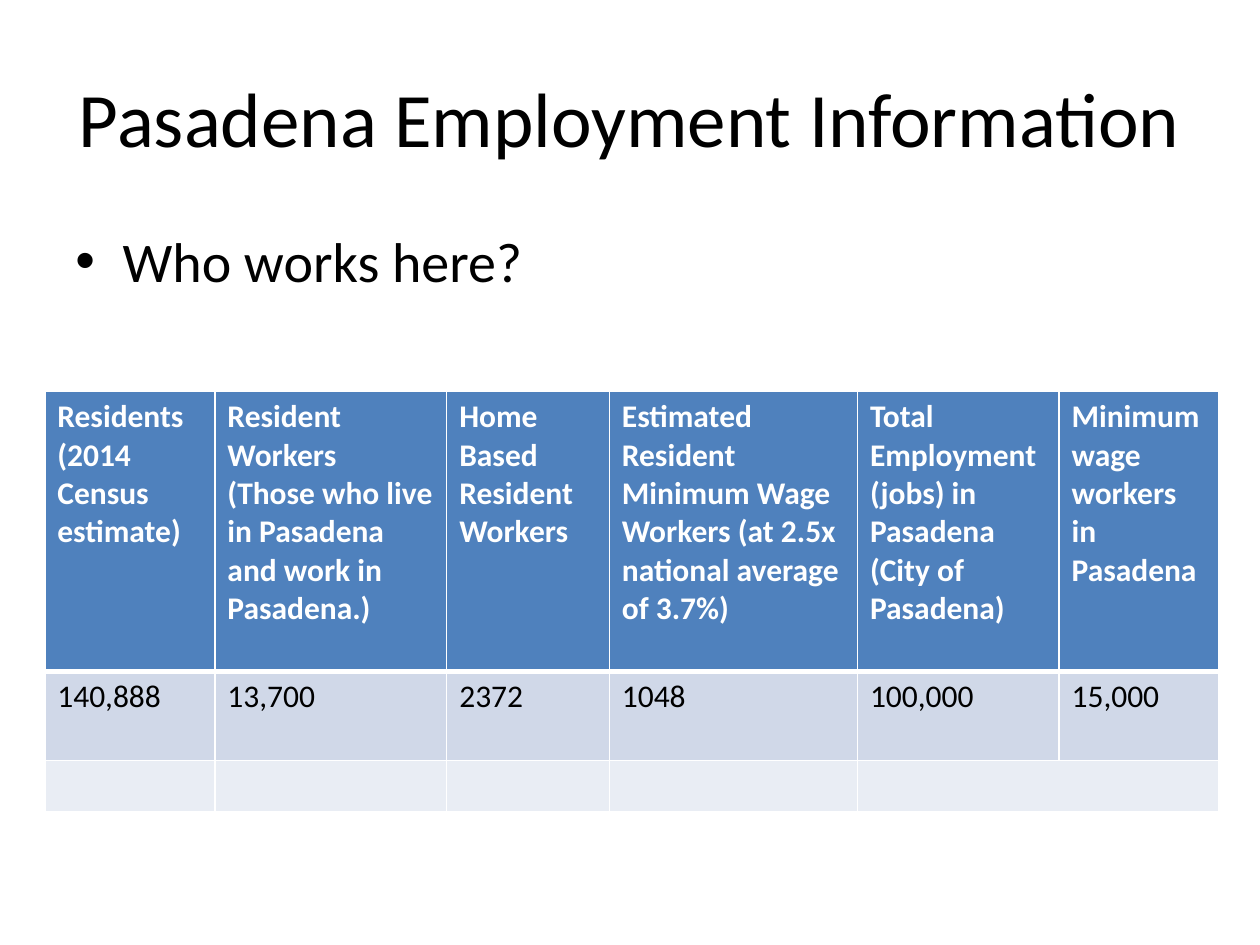
"""Build the Pasadena employment slide with its worker table."""
from lxml.etree import SubElement
from pptx import Presentation
from pptx.dml.color import RGBColor
from pptx.enum.text import MSO_ANCHOR as ANCHOR, PP_ALIGN as ALIGN
from pptx.oxml.ns import qn
from pptx.util import Pt

BLACK = RGBColor(0x00, 0x00, 0x00)
WHITE = RGBColor(0xFF, 0xFF, 0xFF)
BLUE = RGBColor(0x4F, 0x81, 0xBD)
BAND = RGBColor(0xD0, 0xD8, 0xE8)
PALE = RGBColor(0xE9, 0xED, 0xF4)


def add_run(p, text, size, color=BLACK, bold=False):
    r = p.add_run()
    r.text = text
    r.font.name = "Calibri"
    r.font.size = Pt(size)
    r.font.color.rgb = color
    r.font.bold = bold


def add_border(cell, side, width):
    ln = SubElement(cell._tc.get_or_add_tcPr(), qn(f"a:ln{side}"), w=str(Pt(width)))
    fill = SubElement(ln, qn("a:solidFill"))
    SubElement(fill, qn("a:srgbClr"), val=str(WHITE))


prs = Presentation()
prs.slide_width, prs.slide_height = Pt(720), Pt(540)
s = prs.slides.add_slide(prs.slide_layouts[6])

title = s.shapes.add_textbox(Pt(36), Pt(21.6), Pt(648), Pt(90))
tf = title.text_frame
tf.word_wrap = True
tf.vertical_anchor = ANCHOR.MIDDLE
p = tf.paragraphs[0]
p.alignment = ALIGN.CENTER
add_run(p, "Pasadena Employment Information", 44)

body = s.shapes.add_textbox(Pt(36), Pt(126), Pt(648), Pt(356.4))
tf = body.text_frame
tf.word_wrap = True
p = tf.paragraphs[0]
p.space_before = Pt(6.4)
pPr = p._p.get_or_add_pPr()
pPr.set("marL", str(Pt(27)))
pPr.set("indent", str(Pt(-27)))
SubElement(pPr, qn("a:buFont"), typeface="Arial")
SubElement(pPr, qn("a:buChar"), char="•")
add_run(p, "Who works here?", 32)

col_widths = [97.2, 132.5, 92.9, 141.8, 115.2, 91.4]
row_heights = [160, 51, 29.2]
headers = [
    ["Residents", "(2014 Census estimate)"],
    ["Resident Workers", "(Those who live in Pasadena and work in Pasadena.)"],
    ["Home Based Resident Workers"],
    ["Estimated Resident Minimum Wage Workers (at 2.5x national average of 3.7%)"],
    ["Total Employment (jobs) in Pasadena (City of Pasadena)"],
    ["Minimum wage workers in Pasadena"],
]
values = [["140,888"], ["13,700"], ["2372"], ["1048"], ["100,000"], ["15,000"]]
rows = [
    (headers, BLUE, WHITE, True),
    (values, BAND, BLACK, False),
    ([[]] * len(headers), PALE, BLACK, False),
]

table = s.shapes.add_table(len(rows), len(headers), Pt(25.6), Pt(223.6),
                           Pt(sum(col_widths)), Pt(sum(row_heights))).table
for column, width in zip(table.columns, col_widths):
    column.width = Pt(width)
for row, height in zip(table.rows, row_heights):
    row.height = Pt(height)

for i, (texts, fill, color, bold) in enumerate(rows):
    for j, lines in enumerate(texts):
        cell = table.cell(i, j)
        for side in "LRTB":
            heavy = (i, side) in [(0, "B"), (1, "T")]
            add_border(cell, side, 3 if heavy else 1)
        cell.fill.solid()
        cell.fill.fore_color.rgb = fill
        tf = cell.text_frame
        for k, line in enumerate(lines):
            p = tf.add_paragraph() if k else tf.paragraphs[0]
            add_run(p, line, 18, color, bold)
table.cell(2, 4).merge(table.cell(2, 5))

prs.save("out.pptx")
